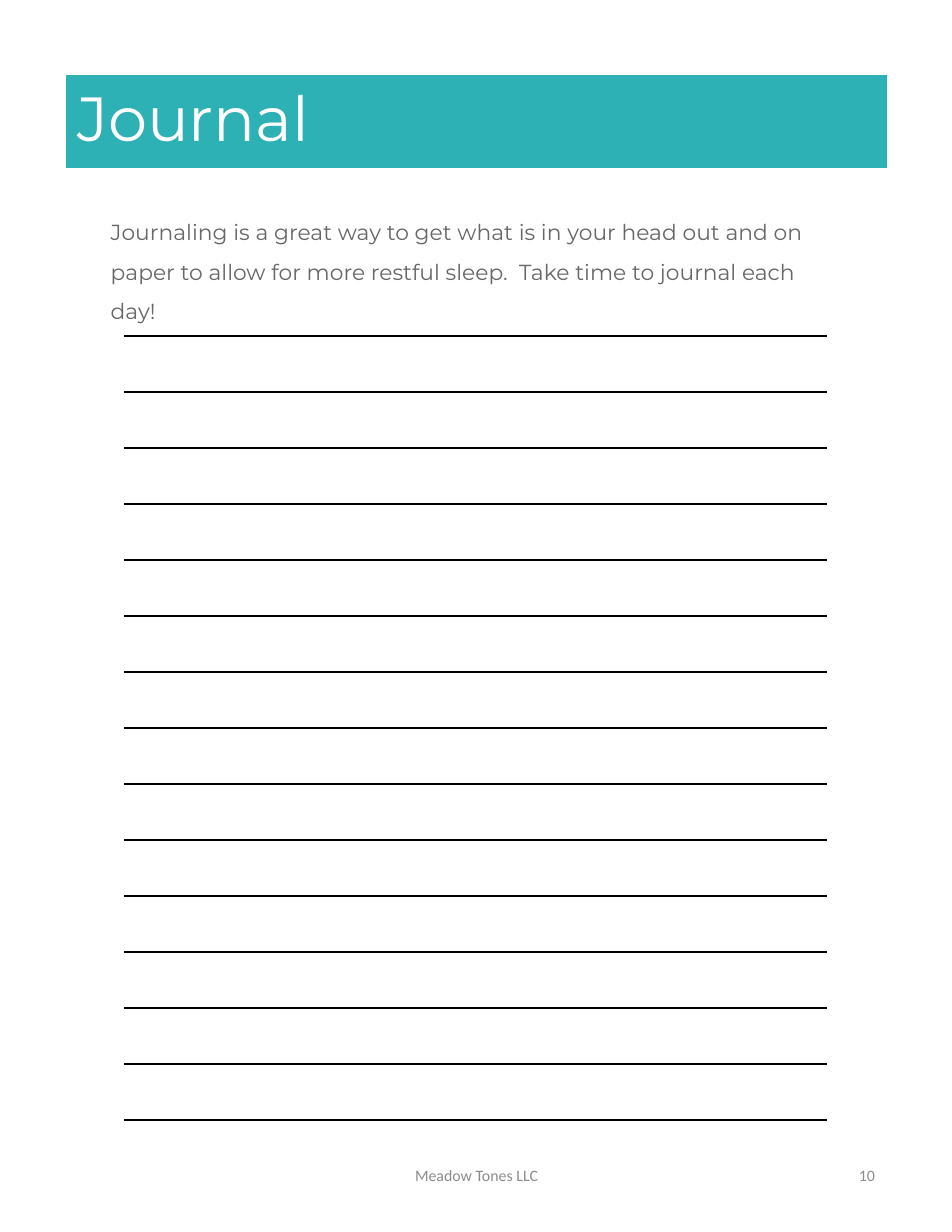
from dataclasses import dataclass

from lxml import etree
from pptx import Presentation
from pptx.dml.color import RGBColor
from pptx.enum.shapes import MSO_SHAPE
from pptx.enum.text import MSO_ANCHOR, PP_ALIGN
from pptx.oxml.ns import qn
from pptx.slide import Slide
from pptx.table import _Cell
from pptx.util import Inches, Pt

RECTANGLE = MSO_SHAPE.RECTANGLE
TOP, MIDDLE = MSO_ANCHOR.TOP, MSO_ANCHOR.MIDDLE
LEFT, CENTER, RIGHT = PP_ALIGN.LEFT, PP_ALIGN.CENTER, PP_ALIGN.RIGHT

LINE_COUNT = 15
LINE_SPACING = 0.5
LINE_WIDTH = 6.27
LINE_COLOR = "000000"
CELL_EDGES = ("lnL", "lnR", "lnT", "lnB")


@dataclass(frozen=True)
class TextBlock:
    text: str
    left: float
    top: float
    width: float
    height: float
    font: str
    size: float
    color: str
    align: PP_ALIGN = LEFT
    anchor: MSO_ANCHOR = MIDDLE
    line_spacing: float = 1.0
    fill: str = ""


BLOCKS = [
    TextBlock("Journal", 0.59, 0.67, 7.33, 0.83, "Montserrat", 40, "FFFFFF",
              line_spacing=0.9, fill="2DB1B5"),
    TextBlock("Journaling is a great way to get what is in your head out and on "
              "paper to allow for more restful sleep.  Take time to journal each day!",
              0.89, 1.79, 6.73, 1.13, "Montserrat", 14, "676767",
              anchor=TOP, line_spacing=1.5),
    TextBlock("10", 6, 10.2, 1.91, 0.59, "Calibri", 10.2, "8C8C8C", RIGHT),
    TextBlock("Meadow Tones LLC", 2.82, 10.2, 2.87, 0.59, "Calibri", 10.2, "8C8C8C", CENTER),
]


def rgb(value: str) -> RGBColor:
    return RGBColor.from_string(value)


def draw_text(slide: Slide, block: TextBlock) -> None:
    bounds = [Inches(v) for v in (block.left, block.top, block.width, block.height)]
    if block.fill:
        holder = slide.shapes.add_shape(RECTANGLE, *bounds)
        holder.shadow.inherit = False
        holder.fill.solid()
        holder.fill.fore_color.rgb = rgb(block.fill)
        holder.line.fill.background()
    else:
        holder = slide.shapes.add_textbox(*bounds)
    frame = holder.text_frame
    frame.text = block.text
    frame.word_wrap = True
    frame.vertical_anchor = block.anchor
    paragraph = frame.paragraphs[0]
    paragraph.alignment = block.align
    paragraph.line_spacing = block.line_spacing
    font = paragraph.runs[0].font
    font.name = block.font
    font.size = Pt(block.size)
    font.color.rgb = rgb(block.color)


def rule_cell(cell: _Cell, ruled_edges: tuple[str, ...]) -> None:
    cell.fill.background()
    properties = cell._tc.get_or_add_tcPr()
    for position, edge in enumerate(CELL_EDGES):
        border = etree.Element(qn(f"a:{edge}"), w=str(Pt(1)))
        if edge in ruled_edges:
            solid = etree.SubElement(border, qn("a:solidFill"))
            etree.SubElement(solid, qn("a:srgbClr"), val=LINE_COLOR)
        else:
            etree.SubElement(border, qn("a:noFill"))
        properties.insert(position, border)


def draw_writing_lines(slide: Slide) -> None:
    lines = slide.shapes.add_table(
        LINE_COUNT, 1, Inches(1.11), Inches(2.5),
        Inches(LINE_WIDTH), Inches(LINE_COUNT * LINE_SPACING)).table
    lines.first_row = False
    lines.horz_banding = False
    for index, row in enumerate(lines.rows):
        row.height = Inches(LINE_SPACING)
        rule_cell(row.cells[0], ("lnT", "lnB") if index else ("lnB",))


def main() -> None:
    presentation = Presentation()
    presentation.slide_width = Inches(8.5)
    presentation.slide_height = Inches(11)
    slide = presentation.slides.add_slide(presentation.slide_layouts[6])
    for block in BLOCKS:
        draw_text(slide, block)
    draw_writing_lines(slide)
    presentation.save("out.pptx")


if __name__ == "__main__":
    main()
